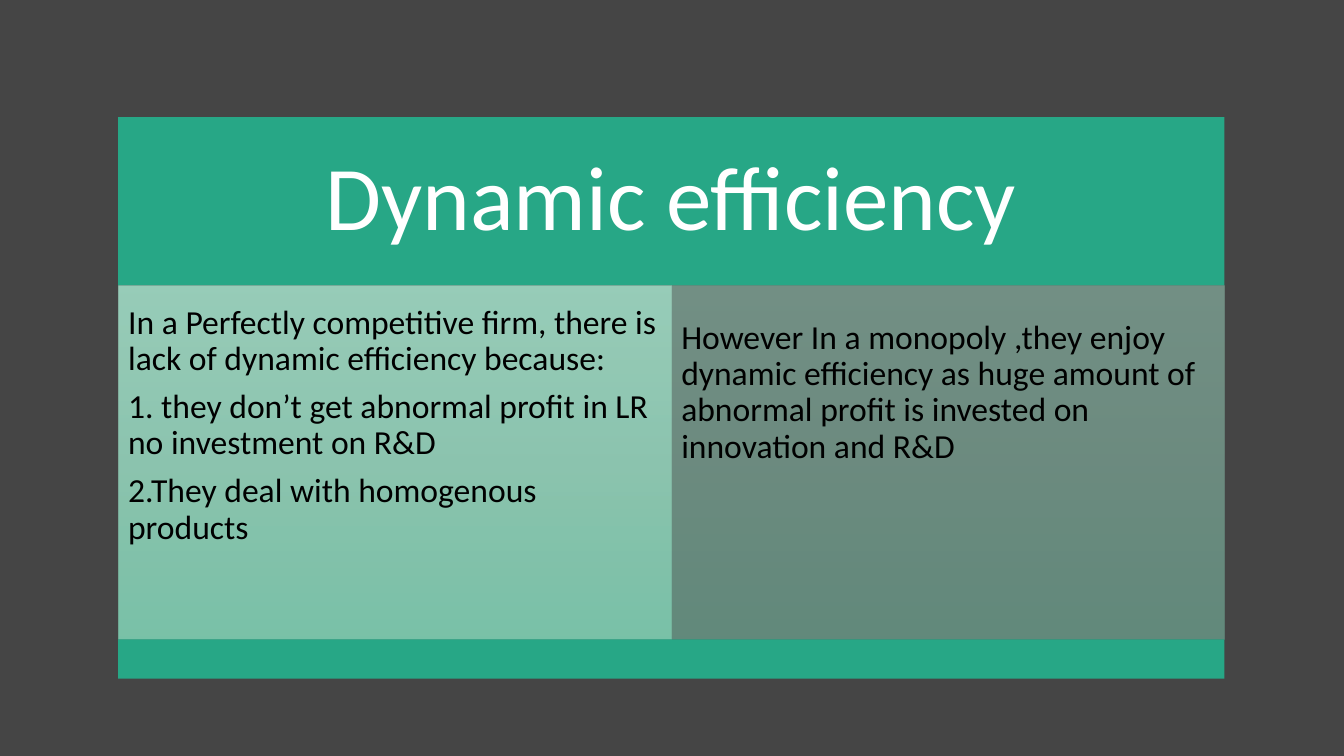
from dataclasses import dataclass

from lxml import etree
from pptx import Presentation
from pptx.dml.color import RGBColor
from pptx.enum.shapes import MSO_SHAPE
from pptx.enum.text import MSO_ANCHOR, PP_ALIGN
from pptx.oxml import parse_xml
from pptx.oxml.ns import qn
from pptx.shapes.autoshape import Shape
from pptx.slide import Slide
from pptx.util import Cm, Pt

RECT = MSO_SHAPE.RECTANGLE
TOP, MIDDLE = MSO_ANCHOR.TOP, MSO_ANCHOR.MIDDLE
LEFT, CENTER = PP_ALIGN.LEFT, PP_ALIGN.CENTER
DRAW_NS = "http://schemas.openxmlformats.org/drawingml/2006/main"


@dataclass(frozen=True)
class Theme:
    back: str = "454545"
    band: str = "27A786"
    light: str = "FFFFFF"
    dark: str = "000000"
    fade: tuple[str, ...] = ("A0DAC4", "93D0B9", "7ECDB1")
    font: str = "Calibri"
    title: float = 65
    body: float = 24


@dataclass(frozen=True)
class Block:
    left: float
    top: float
    width: float
    height: float
    lines: tuple[str, ...] = ()
    size: float = 0
    color: str = ""
    align: PP_ALIGN = LEFT
    anchor: MSO_ANCHOR = TOP
    inset: float = 0.25
    drop: float = 0.25
    alpha: int = 100


THEME = Theme()
EDGE, HEAD = 2.98, 2.95
WIDTH = 27.88
HALF = WIDTH / 2
TITLE_H, PANEL_H, FOOT_H = 4.24, 8.92, 0.99
BODY = HEAD + TITLE_H

BLOCKS = (
    Block(EDGE, HEAD, WIDTH, TITLE_H, ("Dynamic efficiency",), THEME.title,
          THEME.light, CENTER, MIDDLE, 0.69, 0.69),
    Block(EDGE, BODY, HALF, PANEL_H, (
        "In a Perfectly competitive firm, there is lack of dynamic efficiency because:",
        "1. they don’t get abnormal profit in LR no investment on R&D",
        "2.They deal with homogenous products",
    ), THEME.body, THEME.dark, drop=0.5, alpha=90),
    Block(EDGE + HALF, BODY, HALF, PANEL_H, (
        "However In a monopoly ,they enjoy dynamic efficiency as huge amount of "
        "abnormal profit is invested on innovation and R&D",
    ), THEME.body, THEME.dark, drop=0.88, alpha=50),
    Block(EDGE, BODY + PANEL_H, WIDTH, FOOT_H),
)


def assign(target: object, values: dict[str, object]) -> None:
    for name, value in values.items():
        setattr(target, name, value)


def paint(shape: Shape, alpha: int) -> None:
    if alpha == 100:
        shape.fill.solid()
        shape.fill.fore_color.rgb = RGBColor.from_string(THEME.band)
        return
    grad = parse_xml(f'<a:gradFill xmlns:a="{DRAW_NS}" rotWithShape="1"/>')
    stops = etree.SubElement(grad, qn("a:gsLst"))
    step = 100000 // (len(THEME.fade) - 1)
    for index, color in enumerate(THEME.fade):
        stop = etree.SubElement(stops, qn("a:gs"), pos=str(index * step))
        tone = etree.SubElement(stop, qn("a:srgbClr"), val=color)
        etree.SubElement(tone, qn("a:alpha"), val=str(alpha * 1000))
    etree.SubElement(grad, qn("a:lin"), ang="5400000", scaled="0")
    shape.element.spPr.find(qn("a:prstGeom")).addnext(grad)


def write(shape: Shape, block: Block) -> None:
    frame = shape.text_frame
    assign(frame, {
        "text": "\n".join(block.lines),
        "word_wrap": True,
        "vertical_anchor": block.anchor,
        "margin_left": Cm(block.inset),
        "margin_right": Cm(block.inset),
        "margin_top": Cm(block.drop),
        "margin_bottom": Cm(block.inset),
    })
    for para in frame.paragraphs:
        assign(para, {
            "alignment": block.align,
            "line_spacing": 0.9,
            "space_after": Pt(block.size * 0.35),
        })
        assign(para.font, {"name": THEME.font, "size": Pt(block.size)})
        para.font.color.rgb = RGBColor.from_string(block.color)


def draw(slide: Slide, block: Block) -> None:
    shape = slide.shapes.add_shape(
        RECT, Cm(block.left), Cm(block.top), Cm(block.width), Cm(block.height))
    shape.shadow.inherit = False
    shape.line.fill.background()
    paint(shape, block.alpha)
    if block.lines:
        write(shape, block)


def main() -> None:
    """Build the dynamic efficiency slide and save it."""
    deck = Presentation()
    assign(deck, {"slide_width": Cm(33.87), "slide_height": Cm(19.05)})
    slide = deck.slides.add_slide(deck.slide_layouts[6])
    slide.background.fill.solid()
    slide.background.fill.fore_color.rgb = RGBColor.from_string(THEME.back)
    for block in BLOCKS:
        draw(slide, block)
    deck.save("out.pptx")


if __name__ == "__main__":
    main()
